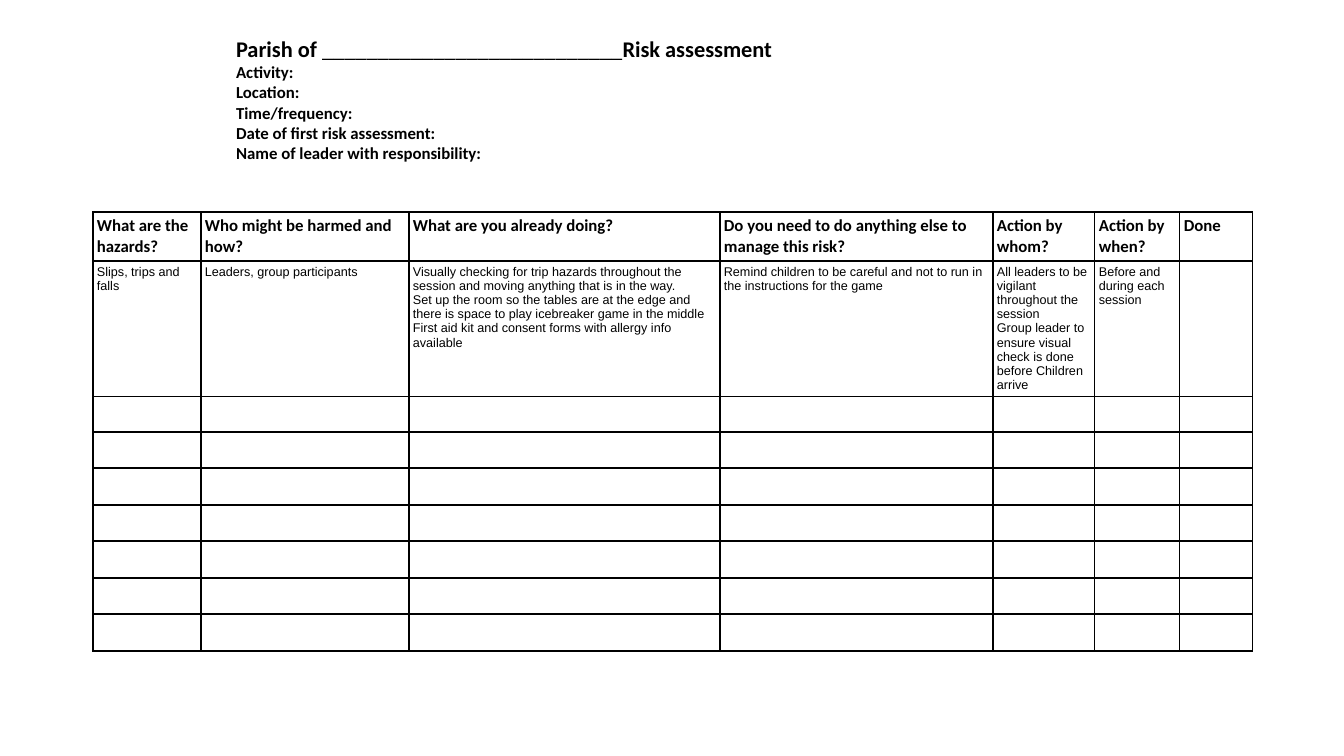
from lxml.etree import SubElement
from pptx import Presentation
from pptx.dml.color import RGBColor as RGB
from pptx.enum.text import MSO_ANCHOR as Anchor, MSO_AUTO_SIZE as Fit, PP_ALIGN as Align
from pptx.oxml.ns import qn
from pptx.util import Emu, Pt

COLORS = {"ink": "000000", "paper": "FFFFFF"}
INSET = 4
HEADS = [
    "What are the hazards?",
    "Who might be harmed and how?",
    "What are you already doing?",
    "Do you need to do anything else to manage this risk?",
    "Action by whom?",
    "Action by when?",
    "Done",
]
RISK = [
    ["Slips, trips and falls"],
    ["Leaders, group participants"],
    [
        "Visually checking for trip hazards throughout the session and moving anything that is in the way.",
        "Set up the room so the tables are at the edge and there is space to play icebreaker game in the middle",
        "First aid kit and consent forms with allergy info available",
    ],
    ["Remind children to be careful and not to run in the instructions for the game"],
    [
        "All leaders to be vigilant throughout the session",
        "Group leader to ensure visual check is done before Children arrive",
    ],
    ["Before and during each session"],
    [],
]
FIELDS = [
    "Activity:",
    "Location:",
    "Time/frequency:",
    "Date of first risk assessment:",
    "Name of leader with responsibility:",
]
WIDTHS = [108, 208, 311, 273, 102, 85, 73]
BLANKS = 7
BLANK_SPAN = 255


def px(n):
    return Emu(round(n * 914400 / 100.8))


def add_run(para, text, size, bold=False, face="Calibri"):
    run = para.add_run()
    run.text = text
    font = run.font
    font.size, font.bold, font.name = Pt(size), bold, face
    font.color.rgb = RGB.from_string(COLORS["ink"])


def add_para(frame, first):
    return frame.paragraphs[0] if first else frame.add_paragraph()


def add_title(slide):
    title = slide.shapes.title
    title.left, title.top, title.width, title.height = map(px, (226, 30, 835, 169))
    frame = title.text_frame
    frame.word_wrap = True
    frame.auto_size = Fit.NONE
    frame.vertical_anchor = Anchor.TOP
    lines = [[("Parish of ", 16, True), ("_" * 27, 16, False), ("Risk assessment", 16, True)]]
    lines += [[(field, 12, True)] for field in FIELDS]
    for i, line in enumerate(lines):
        para = add_para(frame, i == 0)
        para.alignment = Align.LEFT
        for part in line:
            add_run(para, *part)


def add_edges(cell):
    props = cell._tc.get_or_add_tcPr()
    for side in ("L", "R", "T", "B"):
        line = SubElement(props, qn(f"a:ln{side}"), w=str(Pt(1)))
        fill = SubElement(line, qn("a:solidFill"))
        SubElement(fill, qn("a:srgbClr"), val=COLORS["ink"])


def fill_cell(cell, texts, head):
    add_edges(cell)
    cell.fill.solid()
    cell.fill.fore_color.rgb = RGB.from_string(COLORS["paper"])
    cell.margin_left = cell.margin_right = px(INSET)
    cell.margin_top = cell.margin_bottom = px(INSET)
    style = (12, True, "Calibri") if head else (9, False, "Arial")
    frame = cell.text_frame
    for i, text in enumerate(texts):
        add_run(add_para(frame, i == 0), text, *style)
    if not texts:
        # An empty cell takes its least height from the end mark
        SubElement(frame.paragraphs[0]._p, qn("a:endParaRPr"), sz="900")


def add_grid(slide):
    rows = [[[head] for head in HEADS], RISK]
    rows += [[[] for _ in HEADS] for _ in range(BLANKS)]
    marks = [BLANK_SPAN * i // BLANKS for i in range(BLANKS + 1)]
    tall = [49, 135] + [b - a for a, b in zip(marks, marks[1:])]
    frame = slide.shapes.add_table(
        len(rows), len(WIDTHS), px(93), px(212), px(sum(WIDTHS)), px(sum(tall))
    )
    table = frame.table
    table.first_row = table.horz_banding = False
    for col, width in zip(table.columns, WIDTHS):
        col.width = px(width)
    for r, (row, height) in enumerate(zip(rows, tall)):
        table.rows[r].height = px(height)
        for c, texts in enumerate(row):
            fill_cell(table.cell(r, c), texts, r == 0)


def main():
    deck = Presentation()
    deck.slide_width, deck.slide_height = px(1344), px(756)
    slide = deck.slides.add_slide(deck.slide_layouts[5])
    add_grid(slide)
    add_title(slide)
    deck.save("out.pptx")


if __name__ == "__main__":
    main()
